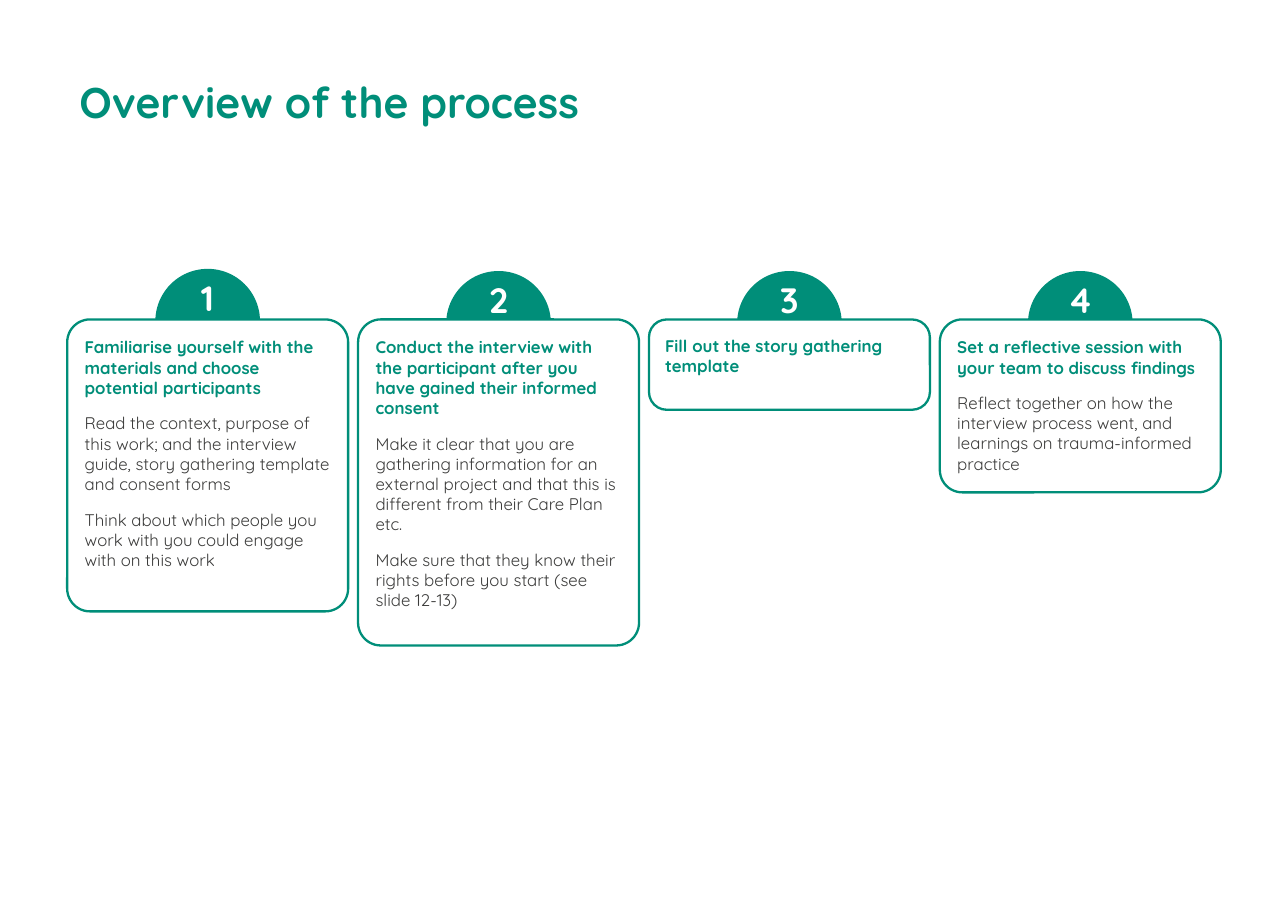
"""Build the four-step overview slide."""
from dataclasses import dataclass

from pptx import Presentation
from pptx.dml.color import RGBColor as Rgb
from pptx.enum.shapes import MSO_SHAPE as Kind
from pptx.enum.text import MSO_ANCHOR as Anchor, MSO_AUTO_SIZE as Fit, PP_ALIGN as Align
from pptx.util import Inches, Pt


@dataclass
class Theme:
    font: str = "Quicksand"
    green: str = "008E79"
    grey: str = "3C3C3B"
    white: str = "FFFFFF"
    title: int = 28
    digit: int = 23
    body: int = 11
    gap: int = 10


theme = Theme()


def write(frame, text, size=theme.body, color=theme.green, bold=True,
          align=Align.LEFT, first=True, fit=Fit.NONE):
    if first:
        frame.word_wrap = True
        frame.auto_size = fit
        frame.vertical_anchor = Anchor.TOP
        frame.margin_left = frame.margin_right = Inches(0.1)
        frame.margin_top = frame.margin_bottom = Inches(0.1)
    para = frame.paragraphs[0] if first else frame.add_paragraph()
    para.alignment = align
    para.space_before = Pt(0 if first else theme.gap)
    run = para.add_run()
    run.text = text
    font = run.font
    font.name, font.size, font.bold = theme.font, Pt(size), bold
    font.color.rgb = Rgb.from_string(color)


def draw(kind, box, fill, adjust):
    shape = slide.shapes.add_shape(kind, *map(Inches, box))
    shape.shadow.inherit = False
    shape.fill.solid()
    shape.fill.fore_color.rgb = Rgb.from_string(fill)
    for i, value in enumerate(adjust):
        shape.adjustments[i] = value
    return shape


deck = Presentation()
deck.slide_width, deck.slide_height = Inches(11.69), Inches(8.27)
slide = deck.slides.add_slide(deck.slide_layouts[5])

title = slide.shapes.title
title.left, title.top, title.width, title.height = map(Inches, (0.62, 0.59, 4.83, 0.63))
write(title.text_frame, "Overview of the process", size=theme.title)

left, top, pitch, width = 0.61, 2.9, 2.64, 2.55
disc, label = 0.95, 1.13

steps = [
    (2.44, 2.65, 0.081, [
        "Familiarise yourself with the materials and choose potential participants",
        "Read the context, purpose of this work; and the interview guide, "
        "story gathering template and consent forms",
        "Think about which people you work with you could engage with on this work"]),
    (2.46, 2.96, 0.081, [
        "Conduct the interview with the participant after you have gained their "
        "informed consent",
        "Make it clear that you are gathering information for an external project "
        "and that this is different from their Care Plan etc.",
        "Make sure that they know their rights before you start (see slide 12-13)"]),
    (2.46, 0.82, 0.197, ["Fill out the story gathering template"]),
    (2.46, 1.57, 0.13, [
        "Set a reflective session with your team to discuss findings",
        "Reflect together on how the interview process went, and learnings on "
        "trauma-informed practice"]),
]

for col, (crest, height, curve, lines) in enumerate(steps):
    x = left + col * pitch
    mid = x + width / 2

    dome = draw(Kind.PIE, (mid - disc / 2, crest, disc, disc), theme.green, (0, 108))
    dome.rotation = 180
    dome.line.fill.background()

    card = draw(Kind.ROUNDED_RECTANGLE, (x, top, width, height), theme.white, (curve,))
    card.line.color.rgb = Rgb.from_string(theme.green)
    card.line.width = Pt(1.5)
    head, *notes = lines
    write(card.text_frame, head)
    for note in notes:
        write(card.text_frame, note, color=theme.grey, bold=False, first=False)

    digit = slide.shapes.add_textbox(
        *map(Inches, (mid - label / 2, crest - 0.03, label, 0.59)))
    write(digit.text_frame, str(col + 1), size=theme.digit, color=theme.white,
          align=Align.CENTER, fit=Fit.SHAPE_TO_FIT_TEXT)

deck.save("out.pptx")
